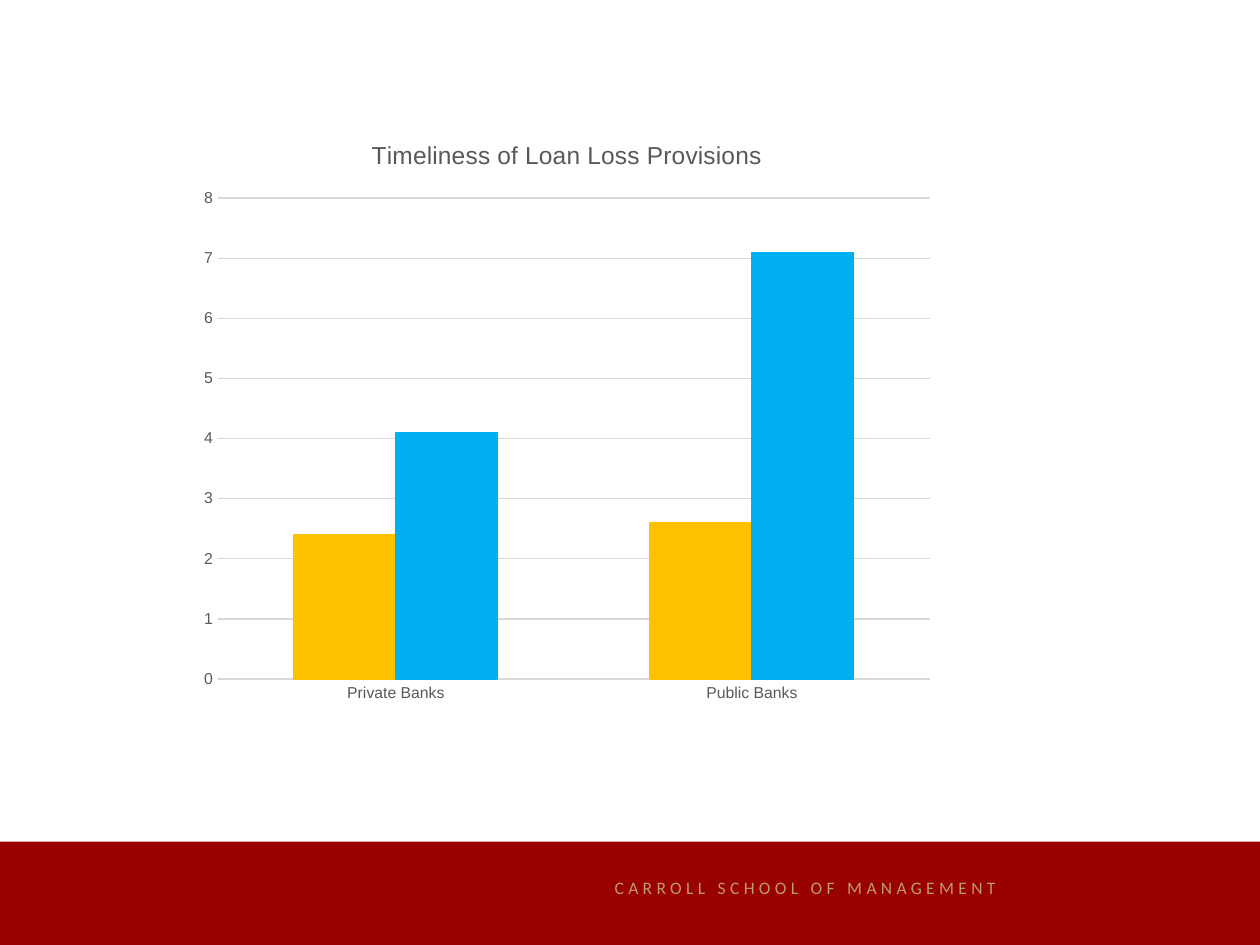
from pptx import Presentation
from pptx.chart.data import CategoryChartData
from pptx.dml.color import RGBColor
from pptx.enum import chart as ch, shapes, text
from pptx.util import Inches, Pt

COLORS = {"band": "990000", "gold": "BC9B6A", "gray": "595959",
          "grid": "D9D9D9", "amber": "FFC000", "blue": "00B0F0"}
TITLE = "Timeliness of Loan Loss Provisions"
FOOTER = "CARROLL SCHOOL OF MANAGEMENT"
BANKS = ["Private Banks", "Public Banks"]
SERIES = [("Series 1", (2.4, 2.6), "amber"),
          ("Series 2", (4.1, 7.1), "blue")]


def color(name):
    return RGBColor.from_string(COLORS[name])


def style(font, name, size, hue):
    font.name, font.size, font.bold = name, Pt(size), False
    font.color.rgb = color(hue)


def box(*sides):
    return [Inches(side) for side in sides]


def add_footer(slide):
    band = slide.shapes.add_shape(shapes.MSO_SHAPE.RECTANGLE, *box(0, 6.68, 10, 0.84))
    band.shadow.inherit = False
    band.fill.solid()
    band.fill.fore_color.rgb = color("band")
    band.line.fill.background()
    frame = slide.shapes.add_textbox(*box(4.78, 6.91, 3.53, 0.27)).text_frame
    frame.word_wrap = False
    frame.auto_size = text.MSO_AUTO_SIZE.SHAPE_TO_FIT_TEXT
    line = frame.paragraphs[0]
    run = line.add_run()
    run.text = FOOTER
    style(run.font, "Calibri", 10, "gold")
    run.font._element.set("spc", "250")


def add_bars(slide):
    data = CategoryChartData()
    data.categories = BANKS
    for name, vals, _ in SERIES:
        data.add_series(name, vals)
    chart = slide.shapes.add_chart(ch.XL_CHART_TYPE.COLUMN_CLUSTERED,
                                   *box(1.5, 0.92, 6, 4.75), data).chart
    chart.font.name, chart.font.size = "Arial", Pt(10)
    chart.has_legend = False
    chart.has_title = True
    head = chart.chart_title
    head.include_in_layout = False
    head.text_frame.text = TITLE
    style(head.text_frame.paragraphs[0].font, "Arial", 14, "gray")

    for axis in (chart.category_axis, chart.value_axis):
        axis.major_tick_mark = axis.minor_tick_mark = ch.XL_TICK_MARK.NONE
        axis.format.line.fill.background()
        style(axis.tick_labels.font, "Arial", 9, "gray")
    scale = chart.value_axis
    scale.minimum_scale, scale.maximum_scale, scale.major_unit = 0, 8, 1
    grid = scale.major_gridlines.format.line
    grid.color.rgb, grid.width = color("grid"), Pt(0.75)

    plot = chart.plots[0]
    plot.gap_width, plot.overlap = 150, 0
    plot.vary_by_categories = False
    for bars, (_, _, hue) in zip(plot.series, SERIES):
        bars.format.fill.solid()
        bars.format.fill.fore_color.rgb = color(hue)
        bars.format.line.color.rgb = color(hue)
        bars.format.line.width = Pt(0.75)


def main():
    deck = Presentation()
    deck.slide_width, deck.slide_height = box(10, 7.5)
    slide = deck.slides.add_slide(deck.slide_layouts[6])
    add_footer(slide)
    add_bars(slide)
    deck.save("out.pptx")


if __name__ == "__main__":
    main()
